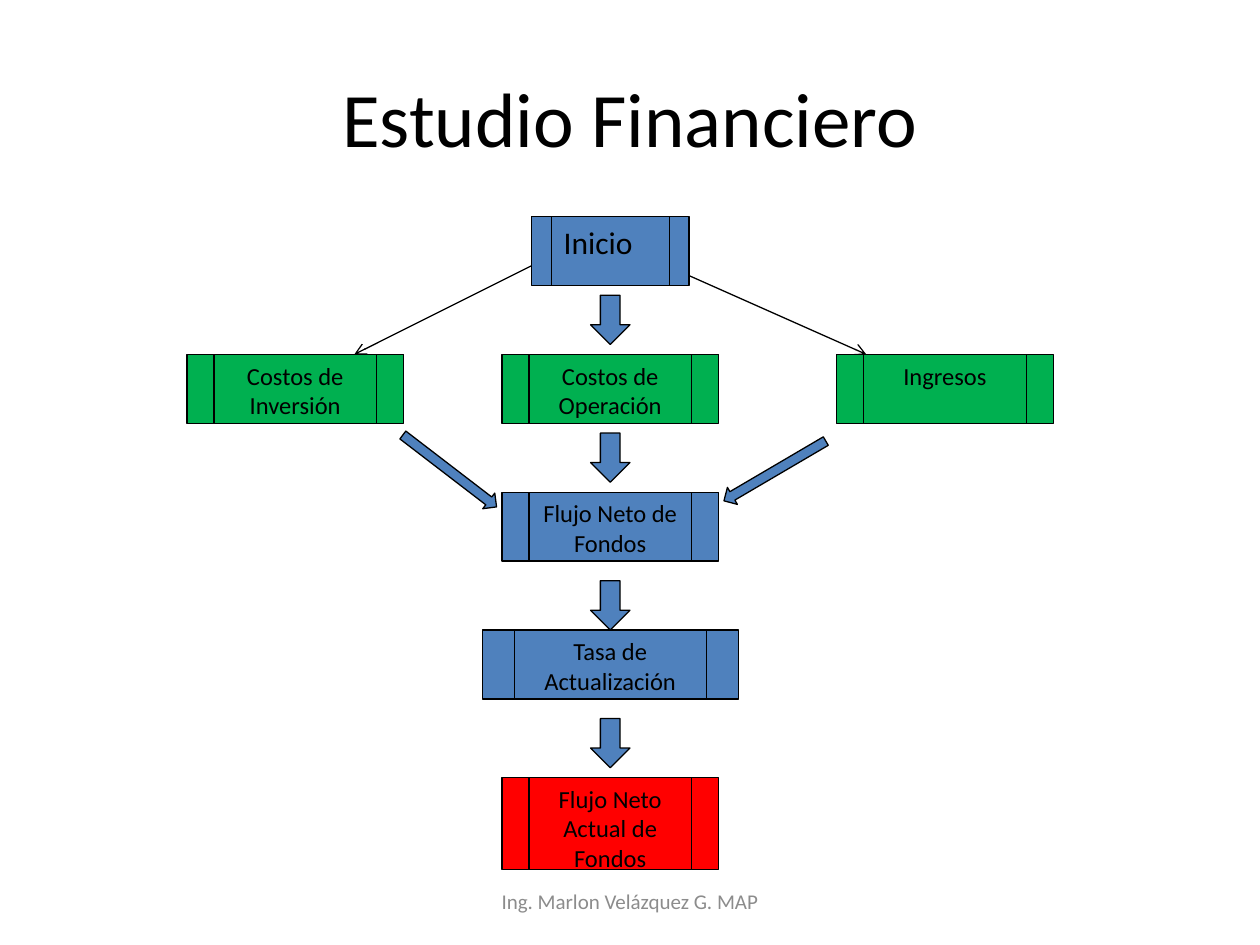
import dataclasses
import typing

import lxml.etree
import pptx
import pptx.dml.color
import pptx.enum.shapes
import pptx.enum.text
import pptx.oxml.ns
import pptx.util

Pt = pptx.util.Pt
RGB = pptx.dml.color.RGBColor
Align = pptx.enum.text.PP_ALIGN
Anchor = pptx.enum.text.MSO_ANCHOR
Kind = pptx.enum.shapes.MSO_SHAPE
qn = pptx.oxml.ns.qn

BLUE = RGB(0x4F, 0x81, 0xBD)
GREEN = RGB(0x00, 0xB0, 0x50)
RED = RGB(0xFF, 0x00, 0x00)
BLACK = RGB(0x00, 0x00, 0x00)
GREY = RGB(0x8C, 0x8C, 0x8C)
FONT = "Calibri"

MID = 348.75  # centre line of the main column
LEFT, RIGHT = 168.75, 540  # centres of the side columns
TOP, STEP = 123.75, 78.75  # first row and distance between rows
TALL = 39.38


@dataclasses.dataclass
class Box:
    text: str
    mid: float
    row: int
    fill: RGB
    width: float = 123.75
    height: float = TALL
    drop: float = 0
    size: float = 14
    align: Align = Align.CENTER


@dataclasses.dataclass
class Arrow:
    kind: Kind
    mid: float
    top: float
    width: float
    height: float
    turn: float = 0


@dataclasses.dataclass
class Link:
    start: tuple[float, float]
    end: tuple[float, float]


BOXES = [
    Box("Inicio", MID, 0, BLUE, width=90, size=18, align=Align.LEFT),
    Box("Costos de Inversión", LEFT, 1, GREEN),
    Box("Costos de Operación", MID, 1, GREEN),
    Box("Ingresos", RIGHT, 1, GREEN),
    Box("Flujo Neto de Fondos", MID, 2, BLUE),
    Box("Tasa de Actualización", MID, 3, BLUE, width=146.25),
    Box("Flujo Neto Actual de Fondos", MID, 4, RED, height=52.5, drop=5.63),
]
ARROWS = [
    Arrow(Kind.DOWN_ARROW, MID, top, 22.5, 28.13)
    for top in (168.75, 247.5, 331.88, 410.63)
] + [
    Arrow(Kind.LEFT_ARROW, 442.8, 263.5, 67.5, 11.25, 329.6),
    Arrow(Kind.LEFT_ARROW, 257, 263.5, 67.5, 11.25, 217.5),
]
LINKS = [
    Link((393.75, 157.5), (495, TOP + STEP)),
    Link((303.75, 151.88), (202.5, TOP + STEP)),
]


def write(frame: typing.Any, text: str, size: float, tint: RGB,
          align: Align, anchor: Anchor) -> None:
    frame.text = text
    frame.word_wrap = True
    frame.vertical_anchor = anchor
    line = frame.paragraphs[0]
    line.alignment = align
    font = line.runs[0].font
    font.name, font.size, font.color.rgb = FONT, Pt(size), tint


def add_shape(slide: typing.Any, kind: Kind, mid: float, top: float,
              width: float, height: float, fill: RGB) -> typing.Any:
    """Add an outlined shape centred on mid."""
    shape = slide.shapes.add_shape(
        kind, Pt(mid - width / 2), Pt(top), Pt(width), Pt(height))
    shape.shadow.inherit = False
    shape.fill.solid()
    shape.fill.fore_color.rgb = fill
    shape.line.color.rgb = BLACK
    shape.line.width = Pt(0.75)
    return shape


def add_box(slide: typing.Any, box: Box) -> None:
    shape = add_shape(slide, Kind.FLOWCHART_PREDEFINED_PROCESS, box.mid,
                      TOP + box.row * STEP + box.drop,
                      box.width, box.height, box.fill)
    write(shape.text_frame, box.text, box.size, BLACK, box.align, Anchor.TOP)


def add_arrow(slide: typing.Any, arrow: Arrow) -> None:
    shape = add_shape(slide, arrow.kind, arrow.mid, arrow.top,
                      arrow.width, arrow.height, BLUE)
    shape.rotation = arrow.turn


def add_link(slide: typing.Any, link: Link) -> None:
    line = slide.shapes.add_connector(
        pptx.enum.shapes.MSO_CONNECTOR.STRAIGHT,
        *map(Pt, link.start + link.end))
    line.line.color.rgb = BLACK
    line.line.width = Pt(0.75)
    props = line._element.spPr
    lxml.etree.SubElement(props.find(qn("a:ln")), qn("a:tailEnd"), type="arrow")
    lxml.etree.SubElement(props, qn("a:effectLst"))


def main() -> None:
    deck = pptx.Presentation()
    deck.slide_width, deck.slide_height = Pt(720), Pt(540)
    slide = deck.slides.add_slide(deck.slide_layouts.get_by_name("Title Only"))

    title = slide.shapes.title
    title.left, title.top, title.width, title.height = map(
        Pt, (36, 21.6, 648, 90))
    write(title.text_frame, "Estudio Financiero", 44, BLACK,
          Align.CENTER, Anchor.MIDDLE)

    for link in LINKS:
        add_link(slide, link)
    for arrow in ARROWS:
        add_arrow(slide, arrow)
    for box in BOXES:
        add_box(slide, box)

    foot = slide.shapes.add_textbox(Pt(246), Pt(500.5), Pt(228), Pt(28.75))
    write(foot.text_frame, "Ing. Marlon Velázquez G. MAP", 12, GREY,
          Align.CENTER, Anchor.MIDDLE)
    deck.save("out.pptx")


if __name__ == "__main__":
    main()
